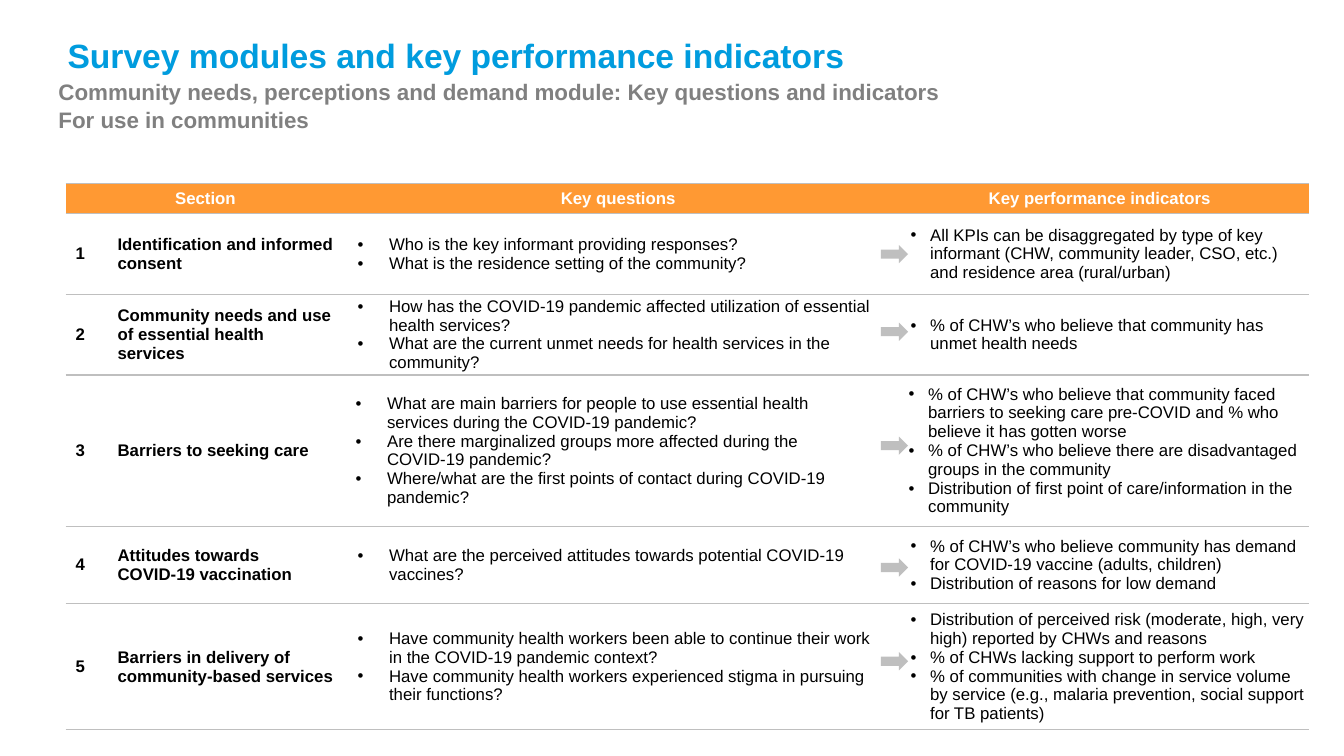
from pptx import Presentation
from pptx.dml.color import RGBColor
from pptx.enum import shapes, text
from pptx.oxml import ns
from pptx.util import Pt
from lxml import etree

# Content
TITLE = "Survey modules and key performance indicators"
SUBTITLE = ["Community needs, perceptions and demand module: Key questions and indicators",
            "For use in communities"]
HEADERS = ["Section", "Key questions", "Key performance indicators"]
# Section, questions, indicators, row height, arrow top
SECTIONS = [
    ("Identification and informed consent",
     ["Who is the key informant providing responses?",
      "What is the residence setting of the community?"],
     ["All KPIs can be disaggregated by type of key informant (CHW, community leader, "
      "CSO, etc.) and residence area (rural/urban)"], 57.6, 175),
    ("Community needs and use of essential health services",
     ["How has the COVID-19 pandemic affected utilization of essential health services?",
      "What are the current unmet needs for health services in the community?"],
     ["% of CHW’s who believe that community has unmet health needs"], 57.6, 230.4),
    ("Barriers to seeking care",
     ["What are main barriers for people to use essential health services during the "
      "COVID-19 pandemic?",
      "Are there marginalized groups more affected during the COVID-19 pandemic?",
      "Where/what are the first points of contact during COVID-19 pandemic?"],
     ["% of CHW’s who believe that community faced barriers to seeking care pre-COVID "
      "and % who believe it has gotten worse",
      "% of CHW’s who believe there are disadvantaged groups in the community",
      "Distribution of first point of care/information in the community"], 95.8, 311.8),
    ("Attitudes towards COVID-19 vaccination",
     ["What are the perceived attitudes towards potential COVID-19 vaccines?"],
     ["% of CHW’s who believe community has demand for COVID-19 vaccine (adults, children)",
      "Distribution of reasons for low demand"], 55.4, 398.9),
    ("Barriers in delivery of community-based services",
     ["Have community health workers been able to continue their work in the COVID-19 "
      "pandemic context?",
      "Have community health workers experienced stigma in pursuing their functions?"],
     ["Distribution of perceived risk (moderate, high, very high) reported by CHWs and reasons",
      "% of CHWs lacking support to perform work",
      "% of communities with change in service volume by service (e.g., malaria "
      "prevention, social support for TB patients)"], 90, 465.8),
]
COLUMNS = [30, 170, 381, 307]
HEADER_HEIGHT = 21.6
QUESTION_INDENT, INDICATOR_INDENT = (22.5, -22.5), (28, -14)
DEFAULT_MARGINS, TIGHT_MARGINS = (7.2, 3.6, 7.2, 3.6), (8.64, 0, 0, 0)
GREY, ORANGE, WHITE, BLACK = "BFBFBF", "FF9933", "FFFFFF", "000000"
NO_STYLE = "{2D5ABB26-0587-4C30-8999-92F81FD0307C}"


def color(value):
    return RGBColor.from_string(value)


def add_span(para, words, size, tint, bold=True):
    span = para.add_run()
    span.text = words
    span.font.name, span.font.size, span.font.bold = "Arial", Pt(size), bold
    span.font.color.rgb = color(tint)


def set_margins(target, margins):
    for side, value in zip(("left", "top", "right", "bottom"), margins):
        setattr(target, "margin_" + side, Pt(value))


def add_box(page, place, margins, anchor):
    frame = page.shapes.add_textbox(*map(Pt, place)).text_frame
    frame.word_wrap = True
    frame.vertical_anchor = anchor
    set_margins(frame, margins)
    return frame.paragraphs[0]


def add_bullet(para, indent):
    props = para._p.get_or_add_pPr()
    props.set("marL", str(Pt(indent[0])))
    props.set("indent", str(Pt(indent[1])))
    etree.SubElement(props, ns.qn("a:buFont"), typeface="Arial")
    etree.SubElement(props, ns.qn("a:buChar"), char="•")


def add_borders(cell):
    props = cell._tc.get_or_add_tcPr()
    for tag in ("a:lnT", "a:lnB"):
        line = etree.SubElement(props, ns.qn(tag), w=str(Pt(1)))
        solid = etree.SubElement(line, ns.qn("a:solidFill"))
        etree.SubElement(solid, ns.qn("a:srgbClr"), val=GREY)


def fill_cell(cell, lines, tint=BLACK, fill=WHITE, bold=True, margins=DEFAULT_MARGINS,
              indent=None, align=text.PP_ALIGN.LEFT):
    add_borders(cell)
    cell.fill.solid()
    cell.fill.fore_color.rgb = color(fill)
    cell.vertical_anchor = text.MSO_ANCHOR.MIDDLE
    set_margins(cell, margins)
    frame = cell.text_frame
    for index, words in enumerate(lines):
        para = frame.add_paragraph() if index else frame.paragraphs[0]
        para.alignment = align
        if indent:
            add_bullet(para, indent)
        add_span(para, words, 12, tint, bold)


deck = Presentation()
deck.slide_width, deck.slide_height = Pt(960), Pt(540)
page = deck.slides.add_slide(deck.slide_layouts[6])

# Headings
para = add_box(page, (46.8, 26.6, 774, 27.4), (1.44, 0, 28, 0), text.MSO_ANCHOR.BOTTOM)
add_span(para, TITLE, 24, "009CDE")
para = add_box(page, (40.3, 54.7, 723, 41.8), (1.44, 0, 1.44, 0), text.MSO_ANCHOR.TOP)
para.line_spacing = 1.05
add_span(para, SUBTITLE[0], 16, "808080")
para.add_line_break()
add_span(para, SUBTITLE[1], 16, "808080")

# Table
heights = [HEADER_HEIGHT] + [section[3] for section in SECTIONS]
table = page.shapes.add_table(len(heights), len(COLUMNS), Pt(46.8), Pt(131),
                              Pt(sum(COLUMNS)), Pt(sum(heights))).table
table._tbl.tblPr.find(ns.qn("a:tableStyleId")).text = NO_STYLE
table.horz_banding = False
for column, width in zip(table.columns, COLUMNS):
    column.width = Pt(width)
for row, height in zip(table.rows, heights):
    row.height = Pt(height)

table.cell(0, 0).merge(table.cell(0, 1))
for column, header in zip((0, 2, 3), HEADERS):
    fill_cell(table.cell(0, column), [header], WHITE, ORANGE,
              margins=TIGHT_MARGINS if column else DEFAULT_MARGINS,
              align=text.PP_ALIGN.CENTER)
add_borders(table.cell(0, 1))

# Sections, each with an arrow from questions to indicators
for number, (name, questions, indicators, _, arrow_top) in enumerate(SECTIONS, 1):
    margins = DEFAULT_MARGINS if number == 3 else TIGHT_MARGINS
    fill_cell(table.cell(number, 0), [str(number)])
    fill_cell(table.cell(number, 1), [name])
    fill_cell(table.cell(number, 2), questions, bold=False, margins=margins,
              indent=QUESTION_INDENT)
    fill_cell(table.cell(number, 3), indicators, bold=False, margins=margins,
              indent=INDICATOR_INDENT)
    arrow = page.shapes.add_shape(shapes.MSO_SHAPE.RIGHT_ARROW, Pt(629.3), Pt(arrow_top),
                                  Pt(19.4), Pt(13))
    arrow.shadow.inherit = False
    arrow.fill.solid()
    arrow.fill.fore_color.rgb = color(GREY)
    arrow.line.fill.background()

deck.save("out.pptx")
